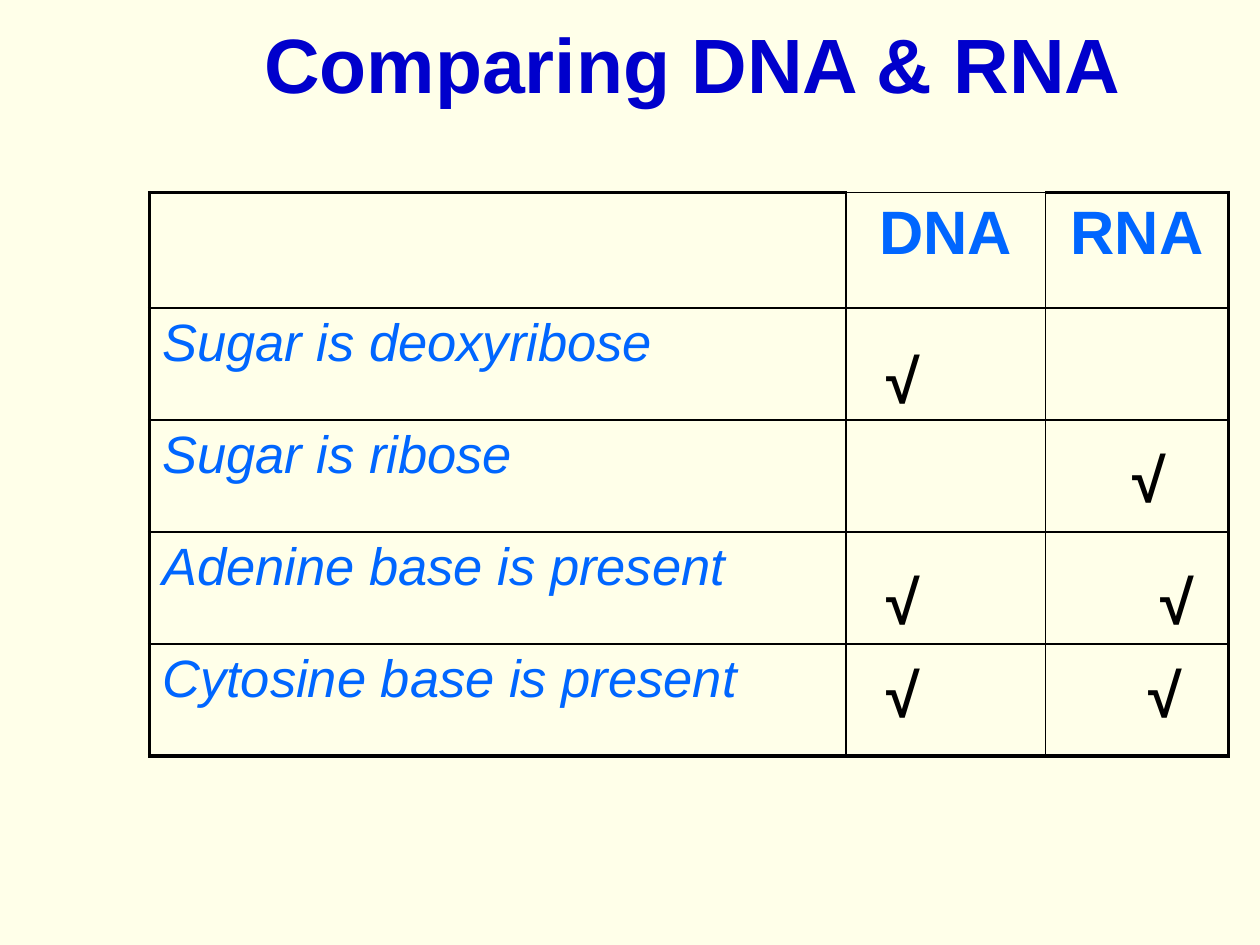
from lxml.etree import SubElement
from pptx import Presentation
from pptx.dml.color import RGBColor
from pptx.enum.text import MSO_ANCHOR, MSO_AUTO_SIZE, PP_ALIGN
from pptx.oxml.ns import qn
from pptx.util import Pt

FONT = "Arial"
CREAM, NAVY, BLUE, BLACK = "FFFFE9", "0000CC", "0066FF", "000000"
THIN, THICK = 1, 2.25

HEADINGS = ["", "DNA", "RNA"]
STATEMENTS = [
    "Sugar is deoxyribose",
    "Sugar is ribose",
    "Adenine base is present",
    "Cytosine base is present",
]
COLUMN_WIDTHS = [398, 114, 104.5]
HEADER_HEIGHT, ROW_HEIGHT = 66, 64

# Tick marks: top of each row of ticks, then the left of each tick
TICK_ROWS = [
    (192.2, [499.7]),
    (248.4, [640]),
    (318.2, [499.7, 656]),
    (371.5, [499.7, 649.4]),
]


def color(hex_string):
    return RGBColor.from_string(hex_string)


def write(frame, text, size, ink, bold=False, italic=False, align=PP_ALIGN.LEFT):
    paragraph = frame.paragraphs[0]
    paragraph.alignment = align
    run = paragraph.add_run()
    run.text = text
    run.font.name = FONT
    run.font.size = Pt(size)
    run.font.bold = bold
    run.font.italic = italic
    run.font.color.rgb = color(ink)


def add_text(shapes, left, top, width, height, text, **text_format):
    box = shapes.add_textbox(Pt(left), Pt(top), Pt(width), Pt(height))
    box.text_frame.word_wrap = True
    write(box.text_frame, text, **text_format)
    return box.text_frame


def set_borders(cell, **widths):
    properties = cell._tc.get_or_add_tcPr()
    for position, side in enumerate("LRTB"):
        line = SubElement(properties, qn(f"a:ln{side}"), w=str(Pt(widths[side])))
        fill = SubElement(line, qn("a:solidFill"))
        SubElement(fill, qn("a:srgbClr"), val=BLACK)
        properties.insert(position, line)


def add_comparison(slide):
    rows, columns = len(STATEMENTS) + 1, len(HEADINGS)
    heights = [HEADER_HEIGHT] + [ROW_HEIGHT] * len(STATEMENTS)
    comparison = slide.shapes.add_table(
        rows, columns, Pt(85.5), Pt(110), Pt(sum(COLUMN_WIDTHS)), Pt(sum(heights))
    ).table
    comparison.first_row = comparison.horz_banding = False
    for column, width in zip(comparison.columns, COLUMN_WIDTHS):
        column.width = Pt(width)
    for row, height in zip(comparison.rows, heights):
        row.height = Pt(height)

    # Thick frame, thin inner lines; the top of the DNA column stays thin
    for r in range(rows):
        for c in range(columns):
            cell = comparison.cell(r, c)
            cell.fill.background()
            set_borders(
                cell,
                L=THICK if c == 0 else THIN,
                R=THICK if c == columns - 1 else THIN,
                T=THICK if r == 0 and c != 1 else THIN,
                B=THICK if r == rows - 1 else THIN,
            )

    for c, heading in enumerate(HEADINGS):
        if heading:
            write(comparison.cell(0, c).text_frame, heading, size=35, ink=BLUE,
                  bold=True, align=PP_ALIGN.CENTER)
    for r, statement in enumerate(STATEMENTS, start=1):
        write(comparison.cell(r, 0).text_frame, statement, size=30, ink=BLUE,
              italic=True)


def add_ticks(slide):
    for top, lefts in TICK_ROWS:
        # Ticks that share a row are grouped
        shapes = slide.shapes
        if len(lefts) > 1:
            shapes = slide.shapes.add_group_shape().shapes
        for left in lefts:
            tick = add_text(shapes, left, top, 42, 49, "√",
                            size=35, ink=BLACK, bold=True)
            tick.auto_size = MSO_AUTO_SIZE.SHAPE_TO_FIT_TEXT


def main():
    deck = Presentation()
    deck.slide_width, deck.slide_height = Pt(720), Pt(540)
    slide = deck.slides.add_slide(deck.slide_layouts[6])
    slide.background.fill.solid()
    slide.background.fill.fore_color.rgb = color(CREAM)

    add_comparison(slide)
    add_ticks(slide)

    # Title
    title = add_text(slide.shapes, 72, 9, 648, 54, "Comparing DNA & RNA",
                     size=44, ink=NAVY, bold=True, align=PP_ALIGN.CENTER)
    title.vertical_anchor = MSO_ANCHOR.MIDDLE

    deck.save("out.pptx")


if __name__ == "__main__":
    main()
